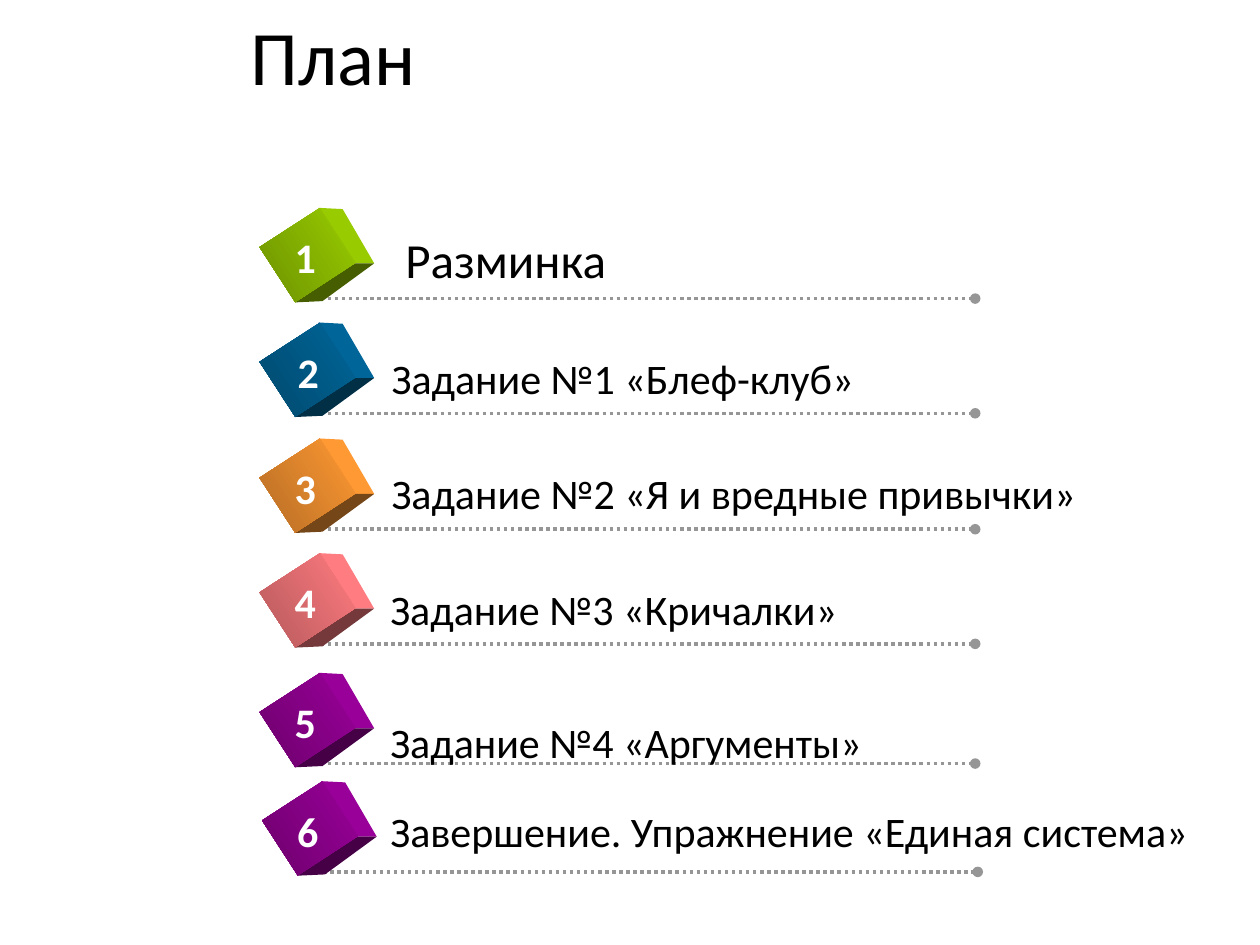
from dataclasses import dataclass

from lxml.etree import SubElement
from pptx import Presentation
from pptx.dml.color import RGBColor
from pptx.enum.dml import MSO_LINE
from pptx.enum.shapes import MSO_CONNECTOR, MSO_SHAPE
from pptx.enum.text import MSO_ANCHOR, MSO_AUTO_SIZE, PP_ALIGN
from pptx.oxml.ns import qn
from pptx.util import Inches, Pt

COLORS = {
    "text": "000000", "number": "FFFFFF", "rule": "969696",
    "green": "99CC00", "green_shade": "6D9200", "green_dark": "465E00",
    "blue": "006699", "blue_shade": "00496D", "blue_dark": "002F46",
    "orange": "FF9933", "orange_shade": "B66D24", "orange_dark": "754617",
    "pink": "FF7C80", "pink_shade": "B6595C", "pink_dark": "75393B",
    "purple": "990099", "purple_shade": "6D006D", "purple_dark": "460046",
}
COLUMNS, ROWS = 100, 75
WIDTH, HEIGHT = Inches(10), Inches(7.5)
CUBE_WIDTH, CUBE_HEIGHT, CUBE_TURN = 5.2, 5.7, 57
LIT_FACE = ((3.5, -0.9), (5.4, -0.8), (7.9, 3.5), (6.2, 3.5))
DARK_FACE = ((6.2, 3.5), (7.9, 3.5), (3.8, 6.5), (1.6, 6.6))


@dataclass(frozen=True)
class PlanItem:
    label: str
    color: str
    top: float
    label_top: float
    label_width: float
    left: float = 21.8
    label_left: float = 30
    label_size: int = 24
    number_align: PP_ALIGN = PP_ALIGN.LEFT


PLAN = [
    PlanItem("Разминка", "green", 17.4, 17.7, 48.4, label_left=31.2, label_size=28),
    PlanItem("Задание №1 «Блеф-клуб»", "blue", 26.5, 27.5, 46.2,
             label_left=30.1, number_align=PP_ALIGN.RIGHT),
    PlanItem("Задание №2 «Я и вредные привычки»", "orange", 35.7, 36.6, 61.6,
             label_left=30.1),
    PlanItem("Задание №3 «Кричалки»", "pink", 44.8, 45.8, 48.3),
    PlanItem("Задание №4 «Аргументы»", "purple", 54.3, 56.4, 47.3),
    PlanItem("Завершение. Упражнение «Единая система»", "purple", 62.9, 63.4, 66.5,
             left=22),
]


def across(columns: float) -> int:
    return round(WIDTH * columns / COLUMNS)


def down(rows: float) -> int:
    return round(HEIGHT * rows / ROWS)


def color_of(name: str) -> RGBColor:
    return RGBColor.from_string(COLORS[name])


def write(frame, text: str, *, size: int, color: str = "text", bold: bool = False,
          align: PP_ALIGN = PP_ALIGN.LEFT, spacing: float | None = None) -> None:
    para = frame.paragraphs[0]
    para.alignment = align
    para.line_spacing = spacing
    span = para.add_run()
    span.text = text
    span.font.name = "Calibri"
    span.font.size = Pt(size)
    span.font.bold = bold
    span.font.color.rgb = color_of(color)


def add_text(page, text: str, left: float, top: float, width: float,
             height: float, *, wrap: bool = True, **style) -> None:
    box = page.shapes.add_textbox(across(left), down(top), across(width), down(height))
    box.text_frame.word_wrap = wrap
    box.text_frame.auto_size = MSO_AUTO_SIZE.SHAPE_TO_FIT_TEXT
    write(box.text_frame, text, **style)


def add_rule(page, left: float, right: float, top: float) -> None:
    rule = page.shapes.add_connector(MSO_CONNECTOR.STRAIGHT, across(left), down(top),
                                     across(right), down(top))
    rule.line.color.rgb = color_of("rule")
    rule.line.width = Pt(2)
    rule.line.dash_style = MSO_LINE.ROUND_DOT
    SubElement(rule.line._get_or_add_ln(), qn("a:tailEnd"), type="oval")
    SubElement(rule._element.spPr, qn("a:effectLst"))


def add_face(page, item: PlanItem, corners: tuple, color: str) -> None:
    points = [(across(item.left + x), down(item.top + y)) for x, y in corners]
    builder = page.shapes.build_freeform(*points[0])
    builder.add_line_segments(points[1:], close=True)
    face = builder.convert_to_shape()
    face.shadow.inherit = False
    face.fill.solid()
    face.fill.fore_color.rgb = color_of(color)
    face.line.fill.background()


def add_cube(page, item: PlanItem) -> None:
    add_face(page, item, LIT_FACE, item.color)
    add_face(page, item, DARK_FACE, f"{item.color}_dark")
    front = page.shapes.add_shape(MSO_SHAPE.RECTANGLE, across(item.left), down(item.top),
                                  across(CUBE_WIDTH), down(CUBE_HEIGHT))
    front.rotation = CUBE_TURN
    front.shadow.inherit = False
    front.line.fill.background()
    front.fill.gradient()
    front.fill.gradient_angle = 270
    for stop, color, position in zip(front.fill.gradient_stops,
                                     (item.color, f"{item.color}_shade"), (0, 1)):
        stop.color.rgb = color_of(color)
        stop.position = position


def add_item(page, number: int, item: PlanItem) -> None:
    add_rule(page, item.left + 3.1, item.left + 55.6, item.top + 6.3)
    add_cube(page, item)
    add_text(page, str(number), item.left + 0.6, item.top + 0.5, 3.9, 5, wrap=False,
             size=24, color="number", bold=True, align=item.number_align)
    add_text(page, item.label, item.label_left, item.label_top, item.label_width, 5,
             size=item.label_size)


def main() -> None:
    deck = Presentation()
    deck.slide_width, deck.slide_height = WIDTH, HEIGHT
    page = deck.slides.add_slide(deck.slide_layouts[5])
    title = page.shapes.title
    title.left, title.top = across(18.9), down(0)
    title.width, title.height = across(77.6), down(9.6)
    title.text_frame.vertical_anchor = MSO_ANCHOR.MIDDLE
    write(title.text_frame, "План", size=44, spacing=0.9)
    for number, item in enumerate(PLAN, start=1):
        add_item(page, number, item)
    deck.save("out.pptx")


if __name__ == "__main__":
    main()
